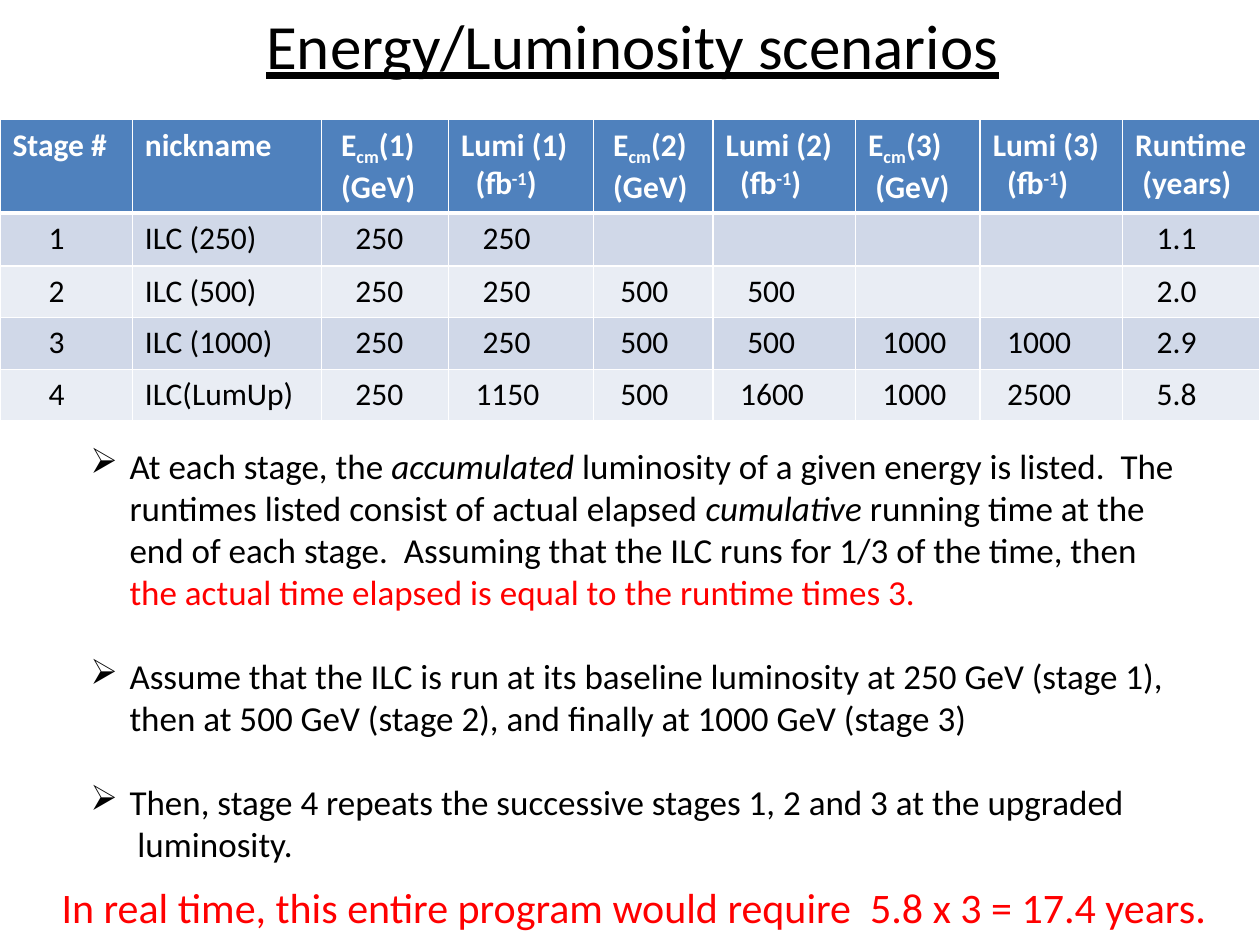
from lxml import etree
from pptx import Presentation
from pptx.dml.color import RGBColor
from pptx.enum.text import MSO_ANCHOR, PP_ALIGN
from pptx.oxml.ns import qn
from pptx.util import Inches, Pt

BLACK = RGBColor(0, 0, 0)
WHITE = RGBColor(255, 255, 255)
RED = RGBColor(255, 0, 0)
BLUE = RGBColor(0x4F, 0x81, 0xBD)
BANDS = [RGBColor(0xD0, 0xD8, 0xE8), RGBColor(0xE9, 0xED, 0xF4)]
LEFT, CENTER = PP_ALIGN.LEFT, PP_ALIGN.CENTER
TOP, MIDDLE = MSO_ANCHOR.TOP, MSO_ANCHOR.MIDDLE

COLS, ROWS = 100, 75
BREAK = ("", "break")
SPACE = 0.57
BASE = {"sub": "-25000", "sup": "30000"}


def energy(num, pad):
    return [(pad, [("E", ""), ("cm", "sub"), (f"({num})", "")]),
            (1, [("(GeV)", "")])]


def lumi(num):
    return [(0, [(f"Lumi ({num})", "")]),
            (2, [("(fb", ""), ("-1", "sup"), (")", "")])]


HEADS = [
    [(0, [("Stage #", "")])],
    [(0, [("nickname", "")])],
    energy(1, 1), lumi(1), energy(2, 1), lumi(2), energy(3, 0), lumi(3),
    [(0, [("Runtime", "")]), (1, [("(years)", "")])],
]
STAGES = [
    ["1", "ILC (250)", "250", "250", "", "", "", "", "1.1"],
    ["2", "ILC (500)", "250", "250", "500", "500", "", "", "2.0"],
    ["3", "ILC (1000)", "250", "250", "500", "500", "1000", "1000", "2.9"],
    ["4", "ILC(LumUp)", "250", "1150", "500", "1600", "1000", "2500", "5.8"],
]
WIDTHS = [10.5, 15, 10.1, 11.5, 9.5, 11.3, 9.9, 11.3, 10.9]
HEIGHTS = [7.4, 4.2, 4.1, 4.1, 4.1]

POINTS = [
    [("At each stage, the ", ""), ("accumulated", "italic"),
     (" luminosity of a given energy is listed.  The", ""), BREAK,
     ("runtimes listed consist of actual elapsed ", ""),
     ("cumulative", "italic"), (" running time at the", ""), BREAK,
     ("end of each stage.  Assuming that the ILC runs for 1/3 of the time, then", ""),
     BREAK,
     ("the actual time elapsed is equal to the runtime times 3.", "red")],
    [("Assume that the ILC is run at its baseline luminosity at 250 GeV (stage 1),", ""),
     BREAK,
     ("then at 500 GeV (stage 2), and finally at 1000 GeV (stage 3)", "")],
    [("Then, stage 4 repeats the successive stages 1, 2 and 3 at the upgraded", ""),
     BREAK, (" luminosity.", "")],
]


def inset(col, text):
    if col < 2:
        return 5 if col == 0 else 0
    return 2 if col == 4 or len(text) == 4 else 3


class Page:
    face = "Calibri"

    def __init__(self, deck):
        self.wide, self.high = deck.slide_width, deck.slide_height
        self.slide = deck.slides.add_slide(deck.slide_layouts[6])

    def across(self, cols):
        return round(self.wide * cols / COLS)

    def down(self, rows):
        return round(self.high * rows / ROWS)

    def place(self, x, y, w, h):
        return self.across(x), self.down(y), self.across(w), self.down(h)

    def letter(self, para, runs, size, color, bold=False):
        font = para.font
        font.name, font.size, font.bold = self.face, Pt(size), bold
        font.color.rgb = color
        for text, style in runs:
            if style == "break":
                para.add_line_break()
                continue
            run = para.add_run()
            run.text = text
            if style == "italic":
                run.font.italic = True
            elif style == "red":
                run.font.color.rgb = RED
            elif style in BASE:
                run._r.get_or_add_rPr().set("baseline", BASE[style])

    def text(self, box, paras, size, color, align=LEFT, anchor=TOP):
        frame = self.slide.shapes.add_textbox(*self.place(*box)).text_frame
        frame.word_wrap = True
        frame.vertical_anchor = anchor
        for i, runs in enumerate(paras):
            para = frame.add_paragraph() if i else frame.paragraphs[0]
            para.alignment = align
            self.letter(para, runs, size, color)
        return frame

    def bullets(self, box, points, size, gap):
        frame = self.text(box, points, size, BLACK)
        for i, para in enumerate(frame.paragraphs):
            if i < len(points) - 1:
                para.space_after = Pt(gap)
            props = para._p.get_or_add_pPr()
            props.set("marL", str(self.across(3.1)))
            props.set("indent", str(-self.across(3.1)))
            mark = etree.Element(qn("a:buChar"), char="➢")
            props.find(qn("a:defRPr")).addprevious(mark)

    def border(self, cell, row):
        props = cell._tc.get_or_add_tcPr()
        thick = {(0, "B"), (1, "T")}
        for i, side in enumerate("LRTB"):
            width = Pt(3 if (row, side) in thick else 1)
            line = etree.Element(qn(f"a:ln{side}"), w=str(int(width)))
            fill = etree.SubElement(line, qn("a:solidFill"))
            etree.SubElement(fill, qn("a:srgbClr"), val=str(WHITE))
            props.insert(i, line)

    def cell(self, cell, row, lines, fill, color):
        cell.fill.solid()
        cell.fill.fore_color.rgb = fill
        self.border(cell, row)
        frame = cell.text_frame
        for i, (pad, runs) in enumerate(lines):
            para = frame.add_paragraph() if i else frame.paragraphs[0]
            self.letter(para, runs, 18, color, row == 0)
            if pad:
                para._p.get_or_add_pPr().set("marL", str(self.across(pad * SPACE)))

    def table(self, x, y):
        box = self.place(x, y, sum(WIDTHS), sum(HEIGHTS))
        table = self.slide.shapes.add_table(len(HEIGHTS), len(WIDTHS), *box).table
        for col, width in zip(table.columns, WIDTHS):
            col.width = self.across(width)
        for row, height in zip(table.rows, HEIGHTS):
            row.height = self.down(height)
        for c, lines in enumerate(HEADS):
            self.cell(table.cell(0, c), 0, lines, BLUE, WHITE)
        for r, stage in enumerate(STAGES, 1):
            for c, text in enumerate(stage):
                lines = [(inset(c, text), [(text, "")] if text else [])]
                self.cell(table.cell(r, c), r, lines, BANDS[(r - 1) % 2], BLACK)


def main():
    deck = Presentation()
    deck.slide_width, deck.slide_height = Inches(10), Inches(7.5)
    page = Page(deck)
    title = page.text((5.4, -1.5, 89.6, 10), [[("Energy/Luminosity scenarios", "")]],
                      36, BLACK, CENTER, MIDDLE)
    title.paragraphs[0].font.underline = True
    page.table(0, 9.5)
    page.bullets((6.2, 34.8, 89, 34.7), POINTS, 20, 24)
    page.text((3.9, 69.5, 94.8, 8.1),
              [[("In real time, this entire program would require  5.8 x 3 = 17.4 years.", "")]],
              24, RED)
    deck.save("out.pptx")


if __name__ == "__main__":
    main()
